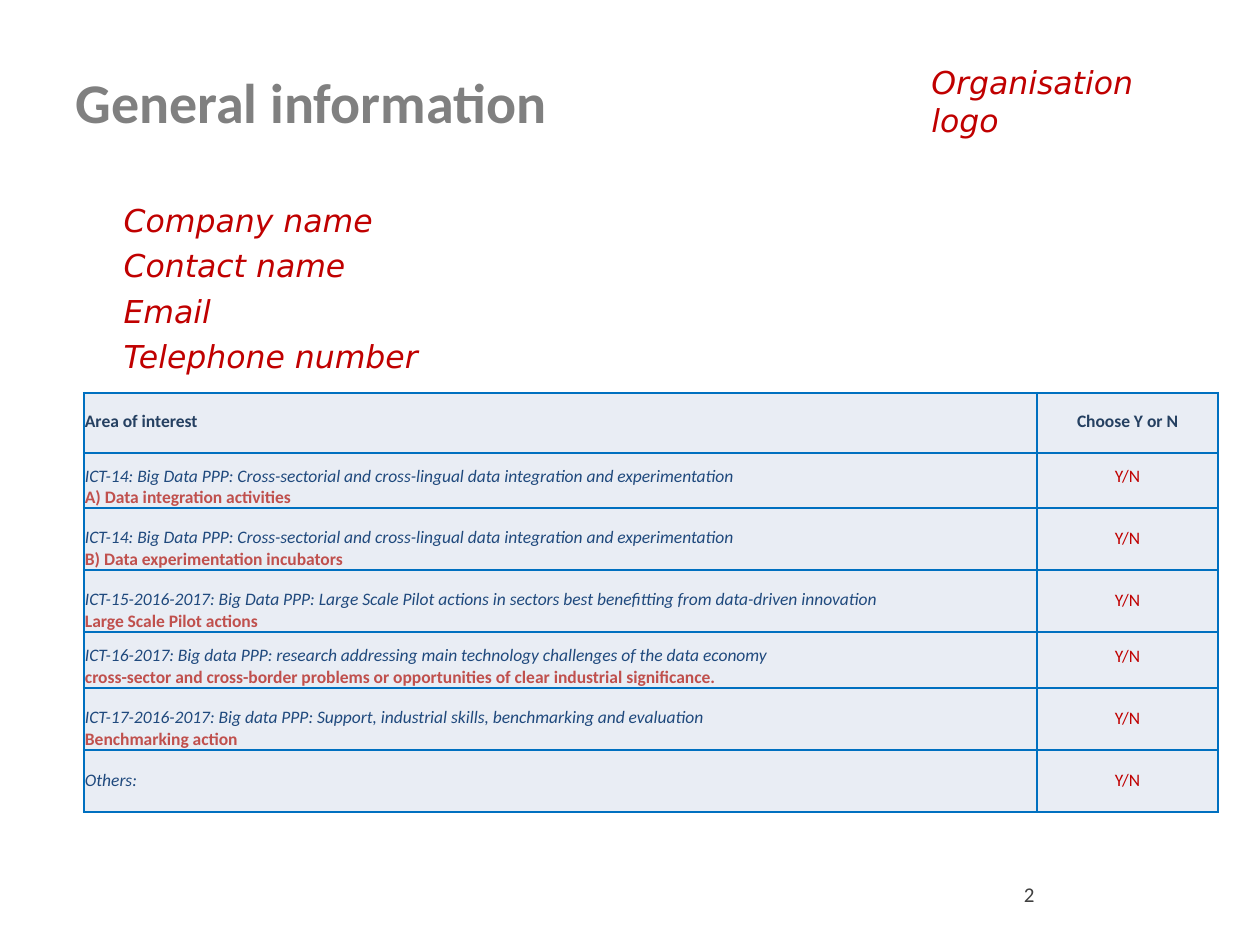
import dataclasses

import lxml.etree
import pptx
import pptx.dml.color
import pptx.enum.text
import pptx.oxml.ns
import pptx.util

EMU_PER_PX = 914400 / 126
PP_ALIGN = pptx.enum.text.PP_ALIGN
ANCHOR = pptx.enum.text.MSO_ANCHOR
qn = pptx.oxml.ns.qn


@dataclasses.dataclass(frozen=True)
class Style:
    size: int
    color: str
    face: str = "Calibri"
    bold: bool = False
    italic: bool = False


@dataclasses.dataclass(frozen=True)
class Theme:
    title: Style = Style(32, "808080", bold=True)
    prompt: Style = Style(18, "C00000", "DejaVu Sans", italic=True)
    page: Style = Style(12, "404040")
    header: Style = Style(10, "254061", bold=True)
    topic: Style = Style(10, "1F497D", italic=True)
    action: Style = Style(10, "C0504D", bold=True)
    choice: Style = Style(10, "C00000")
    cell_fill: str = "E9EDF4"
    border: str = "0070C0"
    border_width: float = 1.5
    contact_gap: float = 4.2


@dataclasses.dataclass(frozen=True)
class Box:
    left: int
    top: int
    width: int
    height: int


@dataclasses.dataclass(frozen=True)
class Area:
    height: int
    lines: tuple[str, ...]
    styles: tuple[Style, ...]
    answer: str = "Y/N"
    answer_style: Style = Theme.choice


THEME = Theme()
CELL_INSET = 1
SINGLE_LINE_LIFT = 21
COLUMNS = (953, 181)
TABLE_LEFT, TABLE_TOP = 84, 393
CONTACT_INDENT = 48
TOPIC_ACTION = (THEME.topic, THEME.action)
CROSS_SECTOR = ("ICT-14: Big Data PPP: Cross-sectorial and cross-lingual "
                "data integration and experimentation")
CONTACTS = ("Company name", "Contact name", "Email", "Telephone number")
AREAS = (
    Area(60, ("Area of interest",), (THEME.header,), "Choose Y or N", THEME.header),
    Area(55, (CROSS_SECTOR, "A) Data integration activities"), TOPIC_ACTION),
    Area(62, (CROSS_SECTOR, "B) Data experimentation incubators"), TOPIC_ACTION),
    Area(62, ("ICT-15-2016-2017: Big Data PPP: Large Scale Pilot actions in sectors "
              "best benefitting from data-driven innovation",
              "Large Scale Pilot actions"), TOPIC_ACTION),
    Area(56, ("ICT-16-2017: Big data PPP: research addressing main technology "
              "challenges of the data economy",
              "cross-sector and cross-border problems or opportunities of clear "
              "industrial significance."), TOPIC_ACTION),
    Area(62, ("ICT-17-2016-2017: Big data PPP: Support, industrial skills, "
              "benchmarking and evaluation", "Benchmarking action"), TOPIC_ACTION),
    Area(62, ("Others:",), (THEME.topic,)),
)


def px(length: int) -> pptx.util.Emu:
    return pptx.util.Emu(round(length * EMU_PER_PX))


def rgb(color: str) -> pptx.dml.color.RGBColor:
    return pptx.dml.color.RGBColor.from_string(color)


def write(frame, lines: tuple[str, ...], styles: tuple[Style, ...],
          align=PP_ALIGN.LEFT, gap: float = 0) -> None:
    frame.text = "\n".join(lines)
    for index, (paragraph, style) in enumerate(zip(frame.paragraphs, styles)):
        paragraph.alignment = align
        paragraph.space_before = pptx.util.Pt(gap if index else 0)
        for run in paragraph.runs:
            run.font.name = style.face
            run.font.size = pptx.util.Pt(style.size)
            run.font.bold = style.bold
            run.font.italic = style.italic
            run.font.color.rgb = rgb(style.color)


def place(shape, box: Box, anchor=ANCHOR.TOP):
    shape.left, shape.top = px(box.left), px(box.top)
    shape.width, shape.height = px(box.width), px(box.height)
    frame = shape.text_frame
    frame.word_wrap = True
    frame.auto_size = pptx.enum.text.MSO_AUTO_SIZE.NONE
    frame.vertical_anchor = anchor
    return frame


def add_label(slide, box: Box, text: str, style: Style,
              align=PP_ALIGN.LEFT, anchor=ANCHOR.TOP) -> None:
    label = slide.shapes.add_textbox(0, 0, 0, 0)
    write(place(label, box, anchor), (text,), (style,), align)


def add_contacts(placeholder) -> None:
    contacts = place(placeholder, Box(63, 195, 1134, 218))
    write(contacts, CONTACTS, (THEME.prompt,) * len(CONTACTS), gap=THEME.contact_gap)
    for paragraph in contacts.paragraphs:
        properties = paragraph._p.get_or_add_pPr()
        properties.set("marL", str(px(CONTACT_INDENT)))
        properties.set("indent", "0")
        lxml.etree.SubElement(properties, qn("a:buNone"))


def format_cell(cell, lines: tuple[str, ...], styles: tuple[Style, ...], align) -> None:
    write(cell.text_frame, lines, styles, align)
    cell.vertical_anchor = ANCHOR.BOTTOM
    cell.margin_left = cell.margin_right = cell.margin_top = px(CELL_INSET)
    cell.margin_bottom = px(SINGLE_LINE_LIFT if len(lines) == 1 else 0)
    properties = cell._tc.get_or_add_tcPr()
    for side in ("a:lnL", "a:lnR", "a:lnT", "a:lnB"):
        line = lxml.etree.SubElement(properties, qn(side))
        line.set("w", str(pptx.util.Pt(THEME.border_width)))
        paint = lxml.etree.SubElement(line, qn("a:solidFill"))
        lxml.etree.SubElement(paint, qn("a:srgbClr")).set("val", THEME.border)
    cell.fill.solid()
    cell.fill.fore_color.rgb = rgb(THEME.cell_fill)


def add_areas(slide) -> None:
    height = sum(area.height for area in AREAS)
    table = slide.shapes.add_table(
        len(AREAS), len(COLUMNS), px(TABLE_LEFT), px(TABLE_TOP),
        px(sum(COLUMNS)), px(height)).table
    table.first_row = table.horz_banding = False
    for column, width in zip(table.columns, COLUMNS):
        column.width = px(width)
    for row, area in zip(table.rows, AREAS):
        row.height = px(area.height)
        interest, choice = row.cells
        format_cell(interest, area.lines, area.styles, PP_ALIGN.LEFT)
        format_cell(choice, (area.answer,), (area.answer_style,), PP_ALIGN.CENTER)


def main() -> None:
    deck = pptx.Presentation()
    deck.slide_width, deck.slide_height = px(1260), px(945)
    slide = deck.slides.add_slide(deck.slide_layouts[1])
    heading = place(slide.shapes.title, Box(63, 38, 1134, 127), ANCHOR.MIDDLE)
    write(heading, ("General information",), (THEME.title,))
    add_contacts(slide.placeholders[1])
    add_label(slide, Box(963, 869, 84, 50), "2", THEME.page,
              PP_ALIGN.RIGHT, ANCHOR.MIDDLE)
    add_areas(slide)
    add_label(slide, Box(919, 57, 256, 89), "Organisation logo", THEME.prompt)
    deck.save("out.pptx")


if __name__ == "__main__":
    main()
